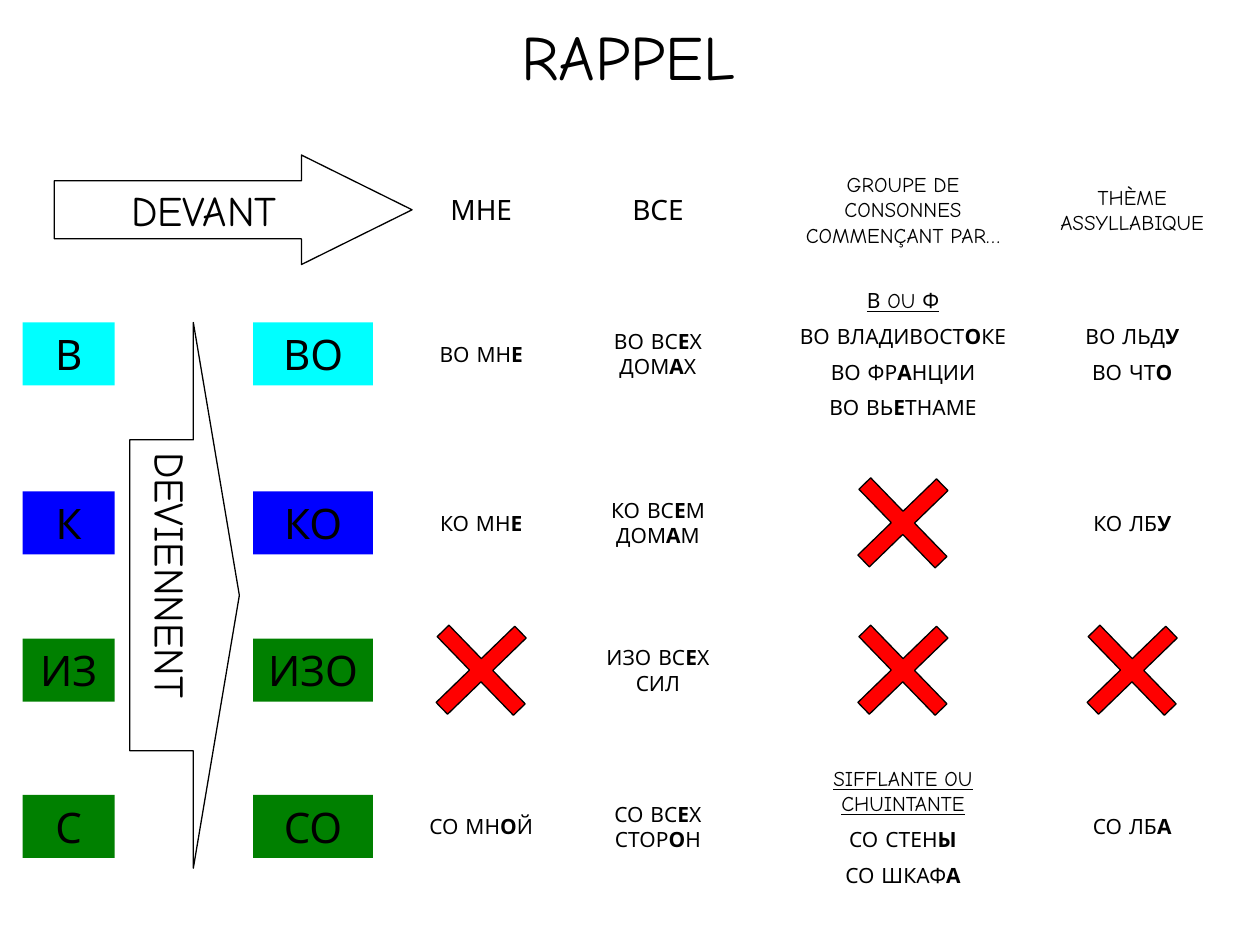
import dataclasses

import pptx
import pptx.dml.color
import pptx.enum.shapes
import pptx.enum.text
import pptx.util

Pt = pptx.util.Pt
SHAPES = pptx.enum.shapes.MSO_SHAPE
CENTER = pptx.enum.text.PP_ALIGN.CENTER
MIDDLE = pptx.enum.text.MSO_ANCHOR.MIDDLE
AUTO_SIZE = pptx.enum.text.MSO_AUTO_SIZE

FONT = "Comic Neue"
BLACK, RED = "000000", "FF0000"
CYAN, BLUE, GREEN = "00FFFF", "0000FF", "008000"
COLUMN_CENTERS = (275, 376, 516, 647)
ROW_CENTERS = (202.3, 298.8, 383, 472.3)
HEADER_CENTER = 119.7
PARAGRAPH_GAP = 6


@dataclasses.dataclass
class Preposition:
    short: str
    long: str
    color: str


@dataclasses.dataclass
class Entry:
    column: int
    center_y: float
    width: float
    lines: int
    phrases: tuple[str, ...]
    size: float = 12
    underline_first: bool = False


@dataclasses.dataclass
class Arrow:
    label: str
    left: float
    top: float
    width: float
    height: float
    shaft: float
    head: float
    vertical: bool = False


PREPOSITIONS = (
    Preposition("В", "ВО", CYAN),
    Preposition("К", "КО", BLUE),
    Preposition("ИЗ", "ИЗО", GREEN),
    Preposition("С", "СО", GREEN),
)
ARROWS = (
    Arrow("DEVIENNENT", 74.2, 184.3, 62.6, 311.8, 0.57, 0.42, True),
    Arrow("DEVANT", 31, 88.6, 204.5, 62.6, 0.53, 1.01),
)
ROW_V, ROW_K, ROW_IZ, ROW_S = ROW_CENTERS
ENTRIES = (
    Entry(0, HEADER_CENTER, 51, 1, ("МНЕ",), 16),
    Entry(1, HEADER_CENTER, 45.4, 1, ("ВСЕ",), 16),
    Entry(2, HEADER_CENTER, 143, 3, ("GROUPE DE CONSONNES COMMENÇANT PAR…",)),
    Entry(3, HEADER_CENTER, 119, 2, ("THÈME ASSYLLABIQUE",)),
    Entry(0, ROW_V, 68, 1, ("ВО МН*Е*",)),
    Entry(1, ROW_V, 88, 2, ("ВО ВС*Е*Х ДОМ*А*Х",)),
    Entry(2, ROW_V, 142, 4, ("В OU Ф", "ВО ВЛАДИВОСТ*О*КЕ", "ВО ФР*А*НЦИИ",
                             "ВО ВЬ*Е*ТНАМЕ"), underline_first=True),
    Entry(3, ROW_V, 78.5, 2, ("ВО ЛЬД*У*", "ВО ЧТ*О*")),
    Entry(0, ROW_K, 68, 1, ("КО МН*Е*",)),
    Entry(1, ROW_K, 79, 2, ("КО ВС*Е*М ДОМ*А*М",)),
    Entry(3, ROW_K, 68, 1, ("КО ЛБ*У*",)),
    Entry(1, ROW_IZ, 88, 2, ("ИЗО ВС*Е*Х СИЛ",)),
    Entry(0, ROW_S, 85, 1, ("СО МН*О*Й",)),
    Entry(1, ROW_S, 88, 2, ("СО ВС*Е*Х СТОР*О*Н",)),
    Entry(2, ROW_S, 142, 4, ("SIFFLANTE OU CHUINTANTE", "СО СТЕН*Ы*",
                             "СО ШКАФ*А*"), underline_first=True),
    Entry(3, ROW_S, 68, 1, ("СО ЛБ*А*",)),
)
CROSSES = ((0, ROW_IZ), (2, ROW_K), (2, ROW_IZ), (3, ROW_IZ))


def rgb(color: str) -> pptx.dml.color.RGBColor:
    return pptx.dml.color.RGBColor.from_string(color)


def style_run(run, size: float, bold: bool = False, underline: bool = False) -> None:
    run.font.name = FONT
    run.font.size = Pt(size)
    run.font.bold = bold
    run.font.underline = underline
    run.font.color.rgb = rgb(BLACK)


def write_label(frame, label: str, size: float, wrap: bool) -> None:
    frame.text = label
    frame.word_wrap = wrap
    frame.vertical_anchor = MIDDLE
    frame.paragraphs[0].alignment = CENTER
    style_run(frame.paragraphs[0].runs[0], size)


def draw_shape(slide, preset, left: float, top: float, width: float, height: float,
               fill: str | None, line: str | None):
    shape = slide.shapes.add_shape(preset, Pt(left), Pt(top), Pt(width), Pt(height))
    shape.shadow.inherit = False
    if fill:
        shape.fill.solid()
        shape.fill.fore_color.rgb = rgb(fill)
    else:
        shape.fill.background()
    if line:
        shape.line.color.rgb = rgb(line)
        shape.line.width = Pt(0.75)
    else:
        shape.line.fill.background()
    return shape


def draw_preposition(slide, preposition: Preposition, center_y: float) -> None:
    height = 36
    for label, left, width in ((preposition.short, 13, 52.5),
                               (preposition.long, 144.7, 68.4)):
        tile = draw_shape(slide, SHAPES.RECTANGLE, left, center_y - height / 2,
                          width, height, preposition.color, None)
        write_label(tile.text_frame, label, 24, True)


def draw_arrow(slide, arrow: Arrow) -> None:
    shape = draw_shape(slide, SHAPES.RIGHT_ARROW, arrow.left, arrow.top,
                       arrow.width, arrow.height, None, BLACK)
    shape.adjustments[0] = arrow.shaft
    shape.adjustments[1] = arrow.head
    write_label(shape.text_frame, arrow.label, 24, False)
    if arrow.vertical:
        shape.text_frame._txBody.bodyPr.set("vert", "eaVert")


def draw_entry(slide, entry: Entry) -> None:
    height = 1.2 * entry.size * entry.lines + 7.2
    height += PARAGRAPH_GAP * (len(entry.phrases) - 1)
    box = slide.shapes.add_textbox(
        Pt(COLUMN_CENTERS[entry.column] - entry.width / 2),
        Pt(entry.center_y - height / 2), Pt(entry.width), Pt(height))
    frame = box.text_frame
    frame.word_wrap = True
    frame.auto_size = AUTO_SIZE.SHAPE_TO_FIT_TEXT
    frame.vertical_anchor = MIDDLE
    for index, phrase in enumerate(entry.phrases):
        paragraph = frame.add_paragraph() if index else frame.paragraphs[0]
        paragraph.alignment = CENTER
        paragraph.space_before = Pt(PARAGRAPH_GAP if index else 0)
        for position, part in enumerate(phrase.split("*")):
            if part:
                run = paragraph.add_run()
                run.text = part
                style_run(run, entry.size, position % 2 == 1,
                          entry.underline_first and index == 0)


def draw_cross(slide, column: int, center_y: float) -> None:
    side = 62.6
    cross = draw_shape(slide, SHAPES.CROSS, COLUMN_CENTERS[column] - side / 2,
                       center_y - side / 2, side, side, RED, BLACK)
    cross.adjustments[0] = 0.425
    cross.rotation = 315.9


def main() -> None:
    deck = pptx.Presentation()
    deck.slide_width, deck.slide_height = Pt(720), Pt(540)
    slide = deck.slides.add_slide(deck.slide_layouts[5])
    title = slide.shapes.title
    title.left, title.top, title.width, title.height = Pt(286.6), Pt(6.5), Pt(144.7), Pt(50.4)
    write_label(title.text_frame, "RAPPEL", 36, False)
    title.text_frame.auto_size = AUTO_SIZE.NONE
    for preposition, center_y in zip(PREPOSITIONS, ROW_CENTERS):
        draw_preposition(slide, preposition, center_y)
    for arrow in ARROWS:
        draw_arrow(slide, arrow)
    for entry in ENTRIES:
        draw_entry(slide, entry)
    for column, center_y in CROSSES:
        draw_cross(slide, column, center_y)
    deck.save("out.pptx")


if __name__ == "__main__":
    main()
